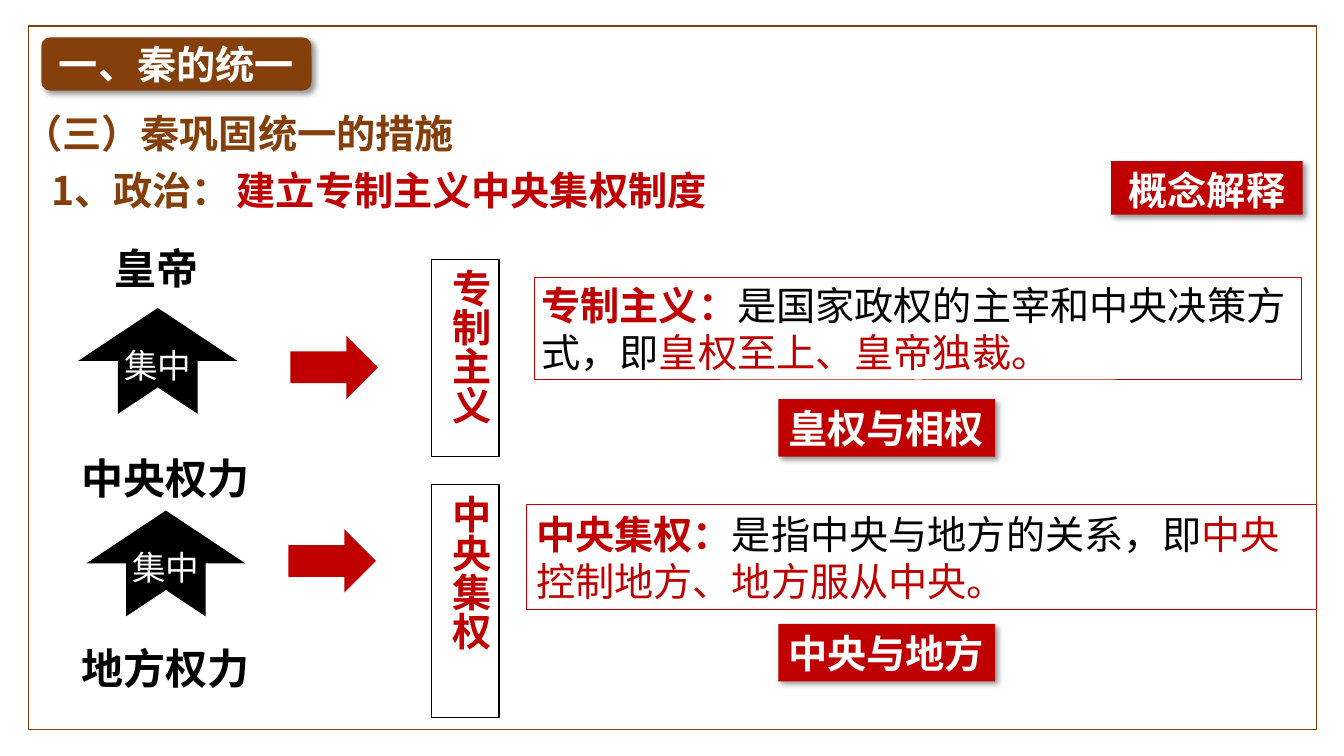
from lxml.etree import SubElement
from pptx import Presentation
from pptx.dml.color import RGBColor
from pptx.enum.shapes import MSO_SHAPE as Kind
from pptx.enum.text import MSO_ANCHOR as Anchor, MSO_AUTO_SIZE as Auto, PP_ALIGN as Align
from pptx.oxml import parse_xml
from pptx.oxml.ns import nsdecls, qn
from pptx.util import Inches, Pt

COLORS = {"brown": "843F0B", "red": "C00000", "black": "000000", "white": "FFFFFF"}
SANS = "Noto Sans CJK SC"
LABEL = "Noto Sans CJK JP"


def color(name):
    return RGBColor.from_string(COLORS[name])


def write(shape, runs, size=28, font=SANS, align=Align.LEFT,
          anchor=Anchor.TOP, wrap=True, grow=True):
    """Fill a shape with runs of (text, colour, bold)."""
    frame = shape.text_frame
    frame.word_wrap = wrap
    frame.auto_size = Auto.SHAPE_TO_FIT_TEXT if grow else Auto.NONE
    frame.vertical_anchor = anchor
    par = frame.paragraphs[0]
    par.alignment = align
    for text, hue, bold in runs:
        run = par.add_run()
        run.text = text
        run.font.size = Pt(size)
        run.font.bold = bold
        run.font.name = font
        run.font.color.rgb = color(hue)
        SubElement(run.font._element, qn("a:ea")).set("typeface", font)


def add_text(shapes, box, runs, **style):
    write(shapes.add_textbox(*map(Inches, box)), runs, **style)


def add_box(shapes, kind, box, fill=None, line=None, width=0.75):
    shape = shapes.add_shape(kind, *map(Inches, box))
    shape.shadow.inherit = False
    if fill:
        shape.fill.solid()
        shape.fill.fore_color.rgb = color(fill)
    else:
        shape.fill.background()
    if line:
        shape.line.color.rgb = color(line)
        shape.line.width = Pt(width)
    else:
        shape.line.fill.background()
    return shape


def add_badge(shapes, kind, box, fill, text, **style):
    """Draw a filled label with a soft shadow."""
    shape = add_box(shapes, kind, box, fill)
    props = shape._element.spPr
    props.remove(props.find(qn("a:effectLst")))
    props.append(parse_xml(
        f'<a:effectLst {nsdecls("a")}><a:outerShdw blurRad="{Pt(4)}" dist="{Pt(3)}" '
        'dir="2700000" algn="tl" rotWithShape="0"><a:srgbClr val="000000">'
        '<a:alpha val="40000"/></a:srgbClr></a:outerShdw></a:effectLst>'))
    write(shape, [(text, "white", True)], **style)


def add_rise(slide, left, top, labels):
    """Group an upward arrow with the power labels around it."""
    shapes = slide.shapes.add_group_shape().shapes
    arrow = add_box(shapes, Kind.NOTCHED_RIGHT_ARROW, (left, top, 1.05, 1.58), "black")
    arrow.rotation = 270
    add_text(shapes, (left - 0.35, top + 0.58, 1.75, 0.5),
             [("集中", "white", False)], size=24, font=LABEL, align=Align.CENTER)
    for text, x, y in labels:
        add_text(shapes, (x, y, 2.19, 0.61), [(text, "black", True)],
                 size=30, font=LABEL, align=Align.CENTER)


def add_pillar(shapes, top, height, text):
    shape = add_box(shapes, Kind.RECTANGLE, (4.28, top, 0.67, height), line="black")
    write(shape, [(text, "red", True)], align=Align.CENTER)
    shape.text_frame._txBody.bodyPr.set("vert", "eaVert")


def add_note(shapes, box, term, plain, key, inset=(0.1, 0.05)):
    shape = add_box(shapes, Kind.RECTANGLE, box, line="red")
    frame = shape.text_frame
    frame.margin_left = frame.margin_right = Inches(inset[0])
    frame.margin_top = frame.margin_bottom = Inches(inset[1])
    write(shape, [(term, "red", True), (plain, "black", False), (key, "red", False)])


def set_title(slide, box, text):
    title = slide.shapes.title
    title.left, title.top, title.width, title.height = map(Inches, box)
    write(title, [(text, "brown", True)])


def main():
    deck = Presentation()
    deck.slide_width, deck.slide_height = Inches(13.33), Inches(7.5)
    slide = deck.slides.add_slide(deck.slide_layouts[5])
    shapes = slide.shapes

    set_title(slide, (0.13, 1.03, 5.71, 0.57), "（三）秦巩固统一的措施")
    add_box(shapes, Kind.RECTANGLE, (0.28, 0.26, 12.78, 6.98), line="brown", width=1)
    add_badge(shapes, Kind.ROUNDED_RECTANGLE, (0.41, 0.37, 2.68, 0.53), "brown",
              "一、秦的统一", align=Align.CENTER, anchor=Anchor.MIDDLE, grow=False)
    add_text(shapes, (0.41, 1.6, 2, 0.57), [("1、政治：", "brown", True)], wrap=False)
    add_text(shapes, (2.25, 1.6, 4.88, 0.57),
             [("建立专制主义中央集权制度", "red", True)], wrap=False)

    add_rise(slide, 1.12, 4.8, [("地方权力", 0.55, 6.32), ("中央权力", 0.55, 4.44)])
    add_rise(slide, 1.04, 2.79, [("皇帝", 0.46, 2.36)])
    for left, top in ((2.86, 5.25), (2.88, 3.33)):
        add_box(shapes, Kind.RIGHT_ARROW, (left, top, 0.87, 0.63), "red")

    add_pillar(shapes, 4.81, 2.31, "中央集权")
    add_pillar(shapes, 2.57, 1.96, "专制主义")
    add_note(shapes, (5.3, 2.75, 7.61, 1.02), "专制主义：",
             "是国家政权的主宰和中央决策方式，即", "皇权至上、皇帝独裁。", (0.07, 0.04))
    add_note(shapes, (5.22, 5.01, 7.84, 1.04), "中央集权：",
             "是指中央与地方的关系，即", "中央控制地方、地方服从中央。")

    for text, top in (("皇权与相权", 3.96), ("中央与地方", 6.19)):
        add_badge(shapes, Kind.RECTANGLE, (7.72, top, 2.15, 0.57), "red", text, wrap=False)
    add_badge(shapes, Kind.RECTANGLE, (11.02, 1.6, 1.9, 0.53), "red", "概念解释",
              align=Align.CENTER, grow=False)
    deck.save("out.pptx")


if __name__ == "__main__":
    main()
